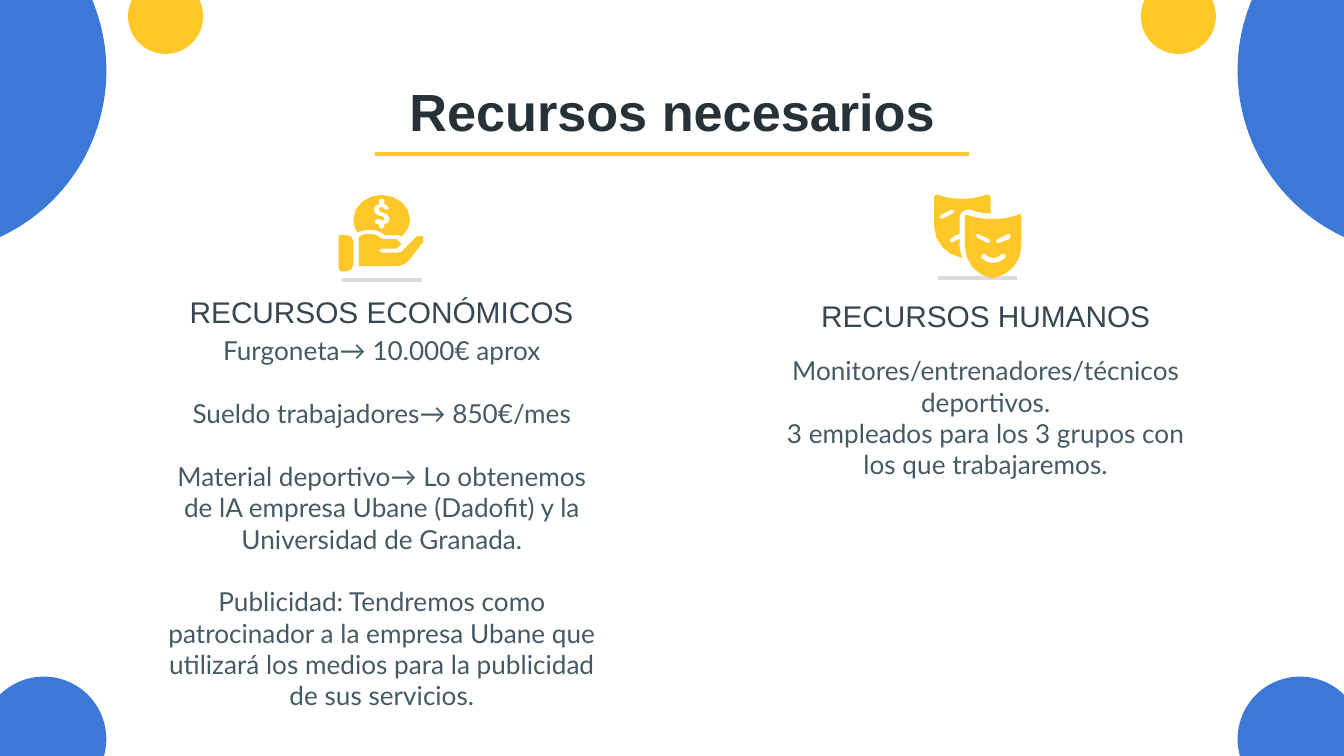
from lxml.etree import SubElement
from pptx import Presentation
from pptx.dml.color import RGBColor
from pptx.enum.shapes import MSO_CONNECTOR as LINK, MSO_SHAPE as FORM
from pptx.enum.text import MSO_ANCHOR as ANCHOR, PP_ALIGN as ALIGN
from pptx.oxml.ns import qn
from pptx.util import Cm, Pt

BLUE = RGBColor(0x3C, 0x78, 0xD8)
GOLD = RGBColor(0xFF, 0xC7, 0x27)
GRAY = RGBColor(0xDB, 0xDB, 0xDB)
INK = RGBColor(0x26, 0x32, 0x38)
SLATE = RGBColor(0x37, 0x47, 0x4F)
STEEL = RGBColor(0x45, 0x5A, 0x64)
UNIT = Cm(2.54) / 100  # icon grid: a hundredth of an inch
WIDE = 25.4

deck = Presentation()
deck.slide_width, deck.slide_height = Cm(WIDE), Cm(14.29)
slide = deck.slides.add_slide(deck.slide_layouts[6])
shapes = slide.shapes


def write(box, lines, font, size, color, bold=False, gap=0, anchor=ANCHOR.TOP):
    """Add a centred text box, one paragraph per line; return its frame."""
    frame = shapes.add_textbox(*map(Cm, box)).text_frame
    frame.word_wrap = True
    frame.vertical_anchor = anchor
    frame.margin_left = frame.margin_right = Cm(0.25)
    frame.margin_top = frame.margin_bottom = Cm(0.25)
    frame.text = "\n".join(lines)
    for i, para in enumerate(frame.paragraphs):
        para.alignment = ALIGN.CENTER
        para.space_before = Pt(gap if i else 0)
        for run in para.runs:
            run.font.name, run.font.size = font, Pt(size)
            run.font.bold = bold
            run.font.color.rgb = color
    return frame


def draw(*loops):
    """Fill closed loops; a pair is a corner, six numbers are a cubic curve."""
    pen = None
    for start, *steps in loops:
        dots, last = [], start
        for step in steps:
            if len(step) == 2:
                dots.append(step)
            else:
                a, b, c = step[:2], step[2:4], step[4:]
                reach = max(abs(p - q) for p, q in zip(last, c))
                count = 4 if reach > 7 else 2 if reach > 1 else 1
                for t in (n / count for n in range(1, count + 1)):
                    u = 1 - t
                    dots.append([u**3 * p + 3 * u * u * t * q + 3 * u * t * t * r + t**3 * s
                                 for p, q, r, s in zip(last, a, b, c)])
            last = step[-2:]
        x, y = (v * UNIT for v in start)
        if pen is None:
            pen = shapes.build_freeform(x, y, scale=1)
        else:
            pen.move_to(x, y)
        pen.add_line_segments([(x * UNIT, y * UNIT) for x, y in dots], close=True)
    icon = pen.convert_to_shape()
    icon.shadow.inherit = False
    icon.fill.solid()
    icon.fill.fore_color.rgb = GOLD
    icon.line.fill.background()


# Corner circles, mirrored left and right
for left, top, size, color in ((23.39, -2.13, 6.93, BLUE), (21.56, -0.4, 1.42, GOLD),
                               (23.39, 12.79, 2.36, BLUE)):
    for x in (left, WIDE - left - size):
        disc = shapes.add_shape(FORM.OVAL, Cm(x), Cm(top), Cm(size), Cm(size))
        disc.shadow.inherit = False
        disc.fill.solid()
        disc.fill.fore_color.rgb = color
        disc.line.fill.background()

# Title and headings
write((2, 1.24, 21.4, 1.6), ["Recursos necesarios"], "Arial", 28, INK, bold=True)
for box, head in (((2, 5.31, 10.43, 1.93), "RECURSOS ECONÓMICOS"),
                  ((14.57, 5.38, 8.12, 1.12), "RECURSOS HUMANOS")):
    write(box, [head], "Arial", 16, SLATE)

# Body text
costs = write((2.79, 6.49, 8.86, 7.39), [
    "Furgoneta→ 10.000€ aprox",
    "Sueldo trabajadores→ 850€/mes",
    "Material deportivo→ Lo obtenemos de lA empresa Ubane (Dadofit) y la Universidad de Granada.",
    "Publicidad: Tendremos como patrocinador a la empresa Ubane que utilizará los medios "
    "para la publicidad de sus servicios.",
], "Lato", 14, STEEL, gap=16.8, anchor=ANCHOR.MIDDLE)
costs.margin_bottom = Cm(0.85)
write((14.57, 6.47, 8.12, 2.84), [
    "Monitores/entrenadores/técnicos deportivos.",
    "3 empleados para los 3 grupos con los que trabajaremos.",
], "Lato", 14, STEEL, anchor=ANCHOR.MIDDLE)

# Rules under the title and the icons
for left, right, y, color in ((7.09, 18.31, 2.91, GOLD), (6.47, 7.97, 5.3, GRAY),
                              (17.72, 19.22, 5.26, GRAY)):
    rule = shapes.add_connector(LINK.STRAIGHT, Cm(left), Cm(y), Cm(right), Cm(y))
    rule.line.color.rgb = color
    rule.line.width = Pt(2.25)
    SubElement(rule._element.spPr, qn("a:effectLst"))

# Coin on a hand: cuff, coin with its sign, palm
draw([(254, 175), (253, 175, 252, 175, 252, 176), (252, 200), (252, 201, 253, 202, 254, 202),
      (258, 202), (261, 202, 263, 199, 263, 197), (263, 180), (263, 177, 261, 175, 258, 175)])
draw([(284, 145), (273, 145, 263, 153, 263, 163), (263, 167, 264, 170, 266, 173),
      (269, 172, 272, 171, 275, 171), (279, 171, 283, 172, 286, 175), (295, 175),
      (297, 175, 298, 175, 299, 176), (303, 172, 305, 168, 305, 163),
      (305, 153, 295, 145, 284, 145)],
     [(284, 148), (285, 148, 286, 148, 286, 149), (286, 152), (287, 152, 288, 153, 289, 154),
      (290, 155, 289, 156, 288, 156), (287, 157, 286, 155, 284, 154),
      (283, 154, 282, 155, 282, 156), (282, 157, 283, 158, 284, 158),
      (287, 158, 290, 160, 290, 163), (290, 165, 288, 167, 286, 167), (286, 169),
      (286, 171, 282, 171, 282, 169), (282, 167), (281, 167, 280, 167, 279, 166),
      (278, 164, 280, 162, 282, 163), (283, 164, 286, 165, 286, 163),
      (286, 162, 285, 161, 284, 161), (281, 161, 278, 159, 278, 156),
      (278, 154, 280, 152, 282, 152), (282, 149), (282, 148, 283, 148, 284, 148)])
draw([(275, 174), (272, 174, 269, 175, 267, 176), (267, 198), (295, 198),
      (299, 198, 302, 196, 304, 194), (315, 180), (318, 177, 313, 173, 310, 176), (299, 187),
      (298, 188, 297, 188, 296, 188), (284, 188), (281, 188, 281, 185, 284, 185), (295, 185),
      (300, 185, 300, 178, 295, 178), (285, 178), (284, 178, 284, 177, 283, 177),
      (281, 175, 278, 174, 275, 174)])

# Theatre masks: the one behind, then the smiling one
draw([(697, 145), (696, 145, 695, 145, 695, 147), (695, 168), (695, 180, 704, 190, 716, 192),
      (715, 189, 714, 186, 714, 183), (714, 178), (712, 178, 711, 179, 710, 180),
      (708, 182, 705, 180, 707, 178), (709, 176, 711, 175, 714, 174), (714, 161),
      (714, 158, 717, 156, 720, 156), (722, 156), (727, 158, 732, 159, 737, 159), (737, 147),
      (737, 145, 736, 145, 734, 145), (728, 147, 722, 148, 716, 148),
      (710, 148, 703, 147, 698, 145)],
     [(708, 156), (711, 155, 711, 158, 709, 159), (701, 163), (699, 163, 698, 161, 700, 160)])
draw([(758, 159), (757, 160), (751, 162, 745, 163, 739, 163), (732, 163, 726, 162, 720, 160),
      (719, 159, 718, 160, 718, 161), (718, 183), (718, 195, 726, 205, 738, 207), (739, 207),
      (751, 205, 760, 195, 760, 183), (760, 161), (760, 160, 759, 159, 758, 159)],
     [(728, 174), (736, 178), (738, 179, 737, 181, 735, 181), (727, 177),
      (725, 176, 726, 173, 728, 174)],
     [(750, 174), (742, 178), (740, 179, 741, 182, 743, 181), (751, 178),
      (753, 176, 752, 173, 750, 174)],
     [(746, 189), (748, 188, 749, 190, 748, 192), (743, 197, 735, 197, 730, 192),
      (729, 190, 731, 188, 733, 189), (736, 193, 742, 193, 745, 189)])

deck.save("out.pptx")
